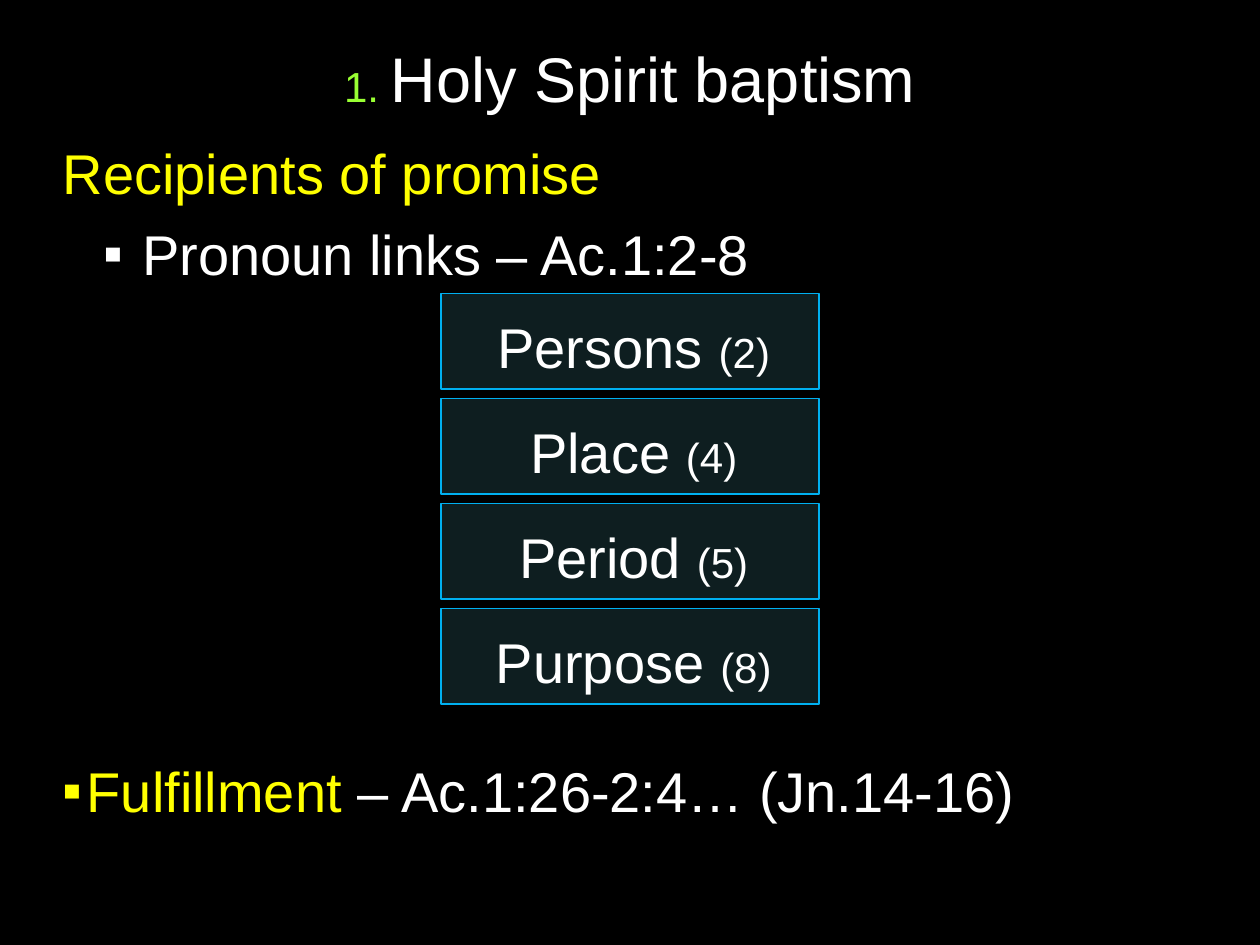
from pptx import Presentation
from pptx.dml.color import RGBColor
from pptx.enum.shapes import MSO_SHAPE
from pptx.enum.text import MSO_ANCHOR, PP_ALIGN
from pptx.oxml.ns import qn
from pptx.util import Inches, Pt
from lxml import etree

BLACK = RGBColor(0x00, 0x00, 0x00)
WHITE = RGBColor(0xFF, 0xFF, 0xFF)
YELLOW = RGBColor(0xFF, 0xFF, 0x00)
GREEN = RGBColor(0x99, 0xFF, 0x33)
DARK_TEAL = RGBColor(0x0E, 0x1E, 0x20)
BLUE = RGBColor(0x00, 0xB0, 0xF0)
RECTANGLE = MSO_SHAPE.RECTANGLE
MIDDLE = MSO_ANCHOR.MIDDLE
CENTER = PP_ALIGN.CENTER


def add_runs(paragraph, runs):
    for text, size, color in runs:
        run = paragraph.add_run()
        run.text = text
        run.font.name = "Arial"
        run.font.size = Pt(size)
        run.font.color.rgb = color


def set_indent(paragraph, left, hanging=0, bullet=None):
    properties = paragraph._p.get_or_add_pPr()
    properties.set("marL", str(Inches(left)))
    properties.set("indent", str(-Inches(hanging)))
    if bullet:
        etree.SubElement(properties, qn("a:buFont")).set("typeface", "Arial")
        etree.SubElement(properties, qn("a:buChar")).set("char", bullet)


presentation = Presentation()
presentation.slide_width = Inches(10)
presentation.slide_height = Inches(7.5)
slide = presentation.slides.add_slide(presentation.slide_layouts[6])
slide.background.fill.solid()
slide.background.fill.fore_color.rgb = BLACK

# Title
title = slide.shapes.add_textbox(Inches(0.5), Inches(0.08), Inches(9), Inches(1))
text_frame = title.text_frame
text_frame.word_wrap = True
text_frame.vertical_anchor = MIDDLE
text_frame.margin_top = Inches(0.12)
paragraph = text_frame.paragraphs[0]
paragraph.alignment = CENTER
add_runs(paragraph, [("1. ", 24, GREEN), ("Holy Spirit baptism", 36, WHITE)])

# Body, with room between its points for the four boxes
body = slide.shapes.add_textbox(Inches(0.4), Inches(1), Inches(9.21), Inches(6.08))
text_frame = body.text_frame
text_frame.word_wrap = True
text_frame.margin_top = Inches(0.1)
add_runs(text_frame.paragraphs[0], [("Recipients of promise", 32, YELLOW)])

points = [
    (0.63, 0.31, 8, [("Pronoun links – Ac.1:2-8", 32, WHITE)]),
    (0.19, 0.19, 268, [("Fulfillment", 32, YELLOW),
                       (" – Ac.1:26-2:4… (Jn.14-16)", 32, WHITE)]),
]
for left, hanging, space_before, runs in points:
    paragraph = text_frame.add_paragraph()
    set_indent(paragraph, left, hanging, "▪")
    paragraph.space_before = Pt(space_before)
    add_runs(paragraph, runs)

# Boxes for the pronoun links
links = [("Persons", 2), ("Place", 4), ("Period", 5), ("Purpose", 8)]
for index, (name, verse) in enumerate(links):
    box = slide.shapes.add_shape(RECTANGLE, Inches(3.5), Inches(2.33 + index * 0.833),
                                 Inches(3), Inches(0.76))
    box.shadow.inherit = False
    box.fill.solid()
    box.fill.fore_color.rgb = DARK_TEAL
    box.line.color.rgb = BLUE
    box.line.width = Pt(1)
    text_frame = box.text_frame
    text_frame.word_wrap = True
    text_frame.vertical_anchor = MIDDLE
    text_frame.margin_top = Inches(0.13)
    paragraph = text_frame.paragraphs[0]
    paragraph.alignment = CENTER
    set_indent(paragraph, 0.06)
    add_runs(paragraph, [(f"{name} ", 32, WHITE), (f"({verse})", 24, WHITE)])

presentation.save("out.pptx")
